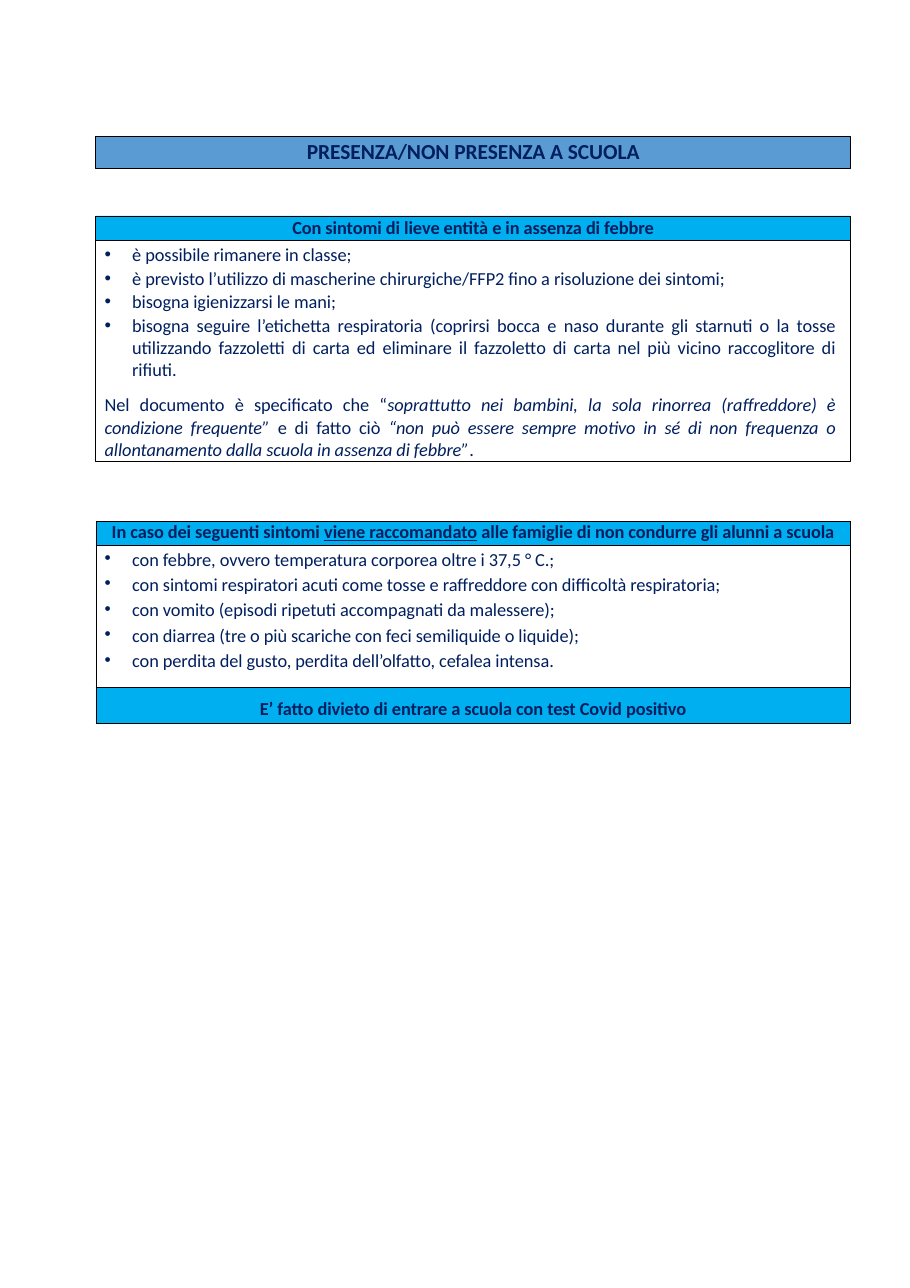
from lxml import etree
from pptx import Presentation
from pptx import util as u
from pptx.dml.color import RGBColor
from pptx.enum import shapes, text
from pptx.oxml.ns import qn

COLORS = {"ink": "001F5F", "title": "5B9BD3", "band": "00AFEF", "rule": "000000"}
FONT = "Calibri"
WIDTH, HEIGHT = 8.26, 11.69
LEFT, SPAN = 0.87, 6.85
BAND = 0.22

TITLE = "PRESENZA/NON PRESENZA A SCUOLA"
MILD_HEADING = "Con sintomi di lieve entità e in assenza di febbre"
MILD_RULES = [
    "è possibile rimanere in classe;",
    "è previsto l’utilizzo di mascherine chirurgiche/FFP2 fino a risoluzione dei sintomi;",
    "bisogna igienizzarsi le mani;",
    "bisogna seguire l’etichetta respiratoria (coprirsi bocca e naso durante gli starnuti "
    "o la tosse utilizzando fazzoletti di carta ed eliminare il fazzoletto di carta nel "
    "più vicino raccoglitore di rifiuti.",
]
MILD_NOTE = [
    ("Nel documento è specificato che “", ""),
    ("soprattutto nei bambini, la sola rinorrea (raffreddore) è condizione frequente” ", "i"),
    ("e di fatto ciò ", ""),
    ("“non può essere sempre motivo in sé di non frequenza o allontanamento dalla scuola "
     "in assenza di febbre”", "i"),
    (".", ""),
]
HOME_HEADING = [
    ("In caso dei seguenti sintomi ", "b"),
    ("viene raccomandato", "bu"),
    (" alle famiglie di non condurre gli alunni a scuola", "b"),
]
HOME_SYMPTOMS = [
    "con febbre, ovvero temperatura corporea oltre i 37,5 ° C.;",
    "con sintomi respiratori acuti come tosse e raffreddore con difficoltà respiratoria;",
    "con vomito (episodi ripetuti accompagnati da malessere);",
    "con diarrea (tre o più scariche con feci semiliquide o liquide);",
    "con perdita del gusto, perdita dell’olfatto, cefalea intensa.",
]
COVID_BAN = "E’ fatto divieto di entrare a scuola con test Covid positivo"

CENTER, JUSTIFY, START = text.PP_ALIGN.CENTER, text.PP_ALIGN.JUSTIFY, text.PP_ALIGN.LEFT


def rgb(name):
    return RGBColor.from_string(COLORS[name])


def write(paragraph, content, style="", size=12, align=START, before=0, spacing=1,
          bullet=False, indent=0):
    props = paragraph._p.get_or_add_pPr()
    props.set("marL", str(u.Inches(0.33 if bullet else indent)))
    props.set("indent", str(u.Inches(-0.25 if bullet else 0)))
    if bullet:
        etree.SubElement(props, qn("a:buChar")).set("char", "•")
    else:
        etree.SubElement(props, qn("a:buNone"))
    paragraph.alignment = align
    paragraph.space_before, paragraph.space_after = u.Pt(before), u.Pt(0)
    paragraph.line_spacing = spacing
    for words, look in [(content, style)] if isinstance(content, str) else content:
        run = paragraph.add_run()
        run.text = words
        font = run.font
        font.name, font.size, font.color.rgb = FONT, u.Pt(size), rgb("ink")
        font.bold, font.italic, font.underline = "b" in look, "i" in look, "u" in look
        run._r.get_or_add_rPr().set("spc", "-5")


def write_list(frame, items, before):
    for i, item in enumerate(items):
        paragraph = frame.paragraphs[0] if i == 0 else frame.add_paragraph()
        write(paragraph, item, before=before if i else 0, bullet=True)


def set_margins(holder, top=0, right=0):
    holder.margin_left = holder.margin_bottom = 0
    holder.margin_top, holder.margin_right = u.Inches(top), u.Inches(right)
    holder.vertical_anchor = text.MSO_ANCHOR.TOP


def frame_box(box, top, height, fill=None, inset=0, right=0):
    box.left, box.top, box.width, box.height = map(u.Inches, (LEFT, top, SPAN, height))
    if fill:
        box.fill.solid()
        box.fill.fore_color.rgb = rgb(fill)
    else:
        box.fill.background()
    box.line.color.rgb, box.line.width = rgb("rule"), u.Pt(0.5)
    frame = box.text_frame
    frame.word_wrap, frame.auto_size = True, text.MSO_AUTO_SIZE.NONE
    set_margins(frame, inset, right)
    return frame


def border(cell):
    props = cell._tc.get_or_add_tcPr()
    for i, side in enumerate(("lnL", "lnR", "lnT", "lnB")):
        line = etree.Element(qn("a:" + side), w=str(u.Pt(0.5)))
        fill = etree.SubElement(line, qn("a:solidFill"))
        etree.SubElement(fill, qn("a:srgbClr"), val=COLORS["rule"])
        props.insert(i, line)


def main():
    deck = Presentation()
    deck.slide_width, deck.slide_height = u.Inches(WIDTH), u.Inches(HEIGHT)
    slide = deck.slides.add_slide(deck.slide_layouts[1])

    title = frame_box(slide.shapes.title, 1.24, 0.29, "title", 0.01)
    write(title.paragraphs[0], TITLE, "b", size=14, align=CENTER)

    heading_box = slide.shapes.add_shape(
        shapes.MSO_SHAPE.RECTANGLE, 0, 0, u.Inches(SPAN), u.Inches(BAND))
    heading_box.shadow.inherit = False
    heading = frame_box(heading_box, 1.96, BAND, "band")
    write(heading.paragraphs[0], MILD_HEADING, "b", align=CENTER)

    rules = frame_box(slide.placeholders[1], 1.96 + BAND, 2.01, inset=0.03, right=0.13)
    write_list(rules, MILD_RULES, 0.8)
    etiquette = rules.paragraphs[-1]
    etiquette.alignment, etiquette.line_spacing = JUSTIFY, 1.02
    write(rules.add_paragraph(), MILD_NOTE, align=JUSTIFY, before=8, spacing=1.02, indent=0.08)

    row_heights = [BAND, 1.29, 0.33]
    home = slide.shapes.add_table(
        len(row_heights), 1, u.Inches(LEFT), u.Inches(4.73),
        u.Inches(SPAN), u.Inches(sum(row_heights))).table
    home.first_row = home.horz_banding = False
    for i, (height, fill, inset) in enumerate(
            zip(row_heights, ("band", None, "band"), (0, 0.03, 0.1))):
        home.rows[i].height = u.Inches(height)
        cell = home.cell(i, 0)
        set_margins(cell, inset)
        if fill:
            cell.fill.solid()
            cell.fill.fore_color.rgb = rgb(fill)
        else:
            cell.fill.background()
        border(cell)
    top, symptoms, ban = (home.cell(i, 0).text_frame for i in range(3))
    write(top.paragraphs[0], HOME_HEADING, align=CENTER)
    write_list(symptoms, HOME_SYMPTOMS, 2)
    write(ban.paragraphs[0], COVID_BAN, "b", align=CENTER)

    deck.save("out.pptx")


if __name__ == "__main__":
    main()
